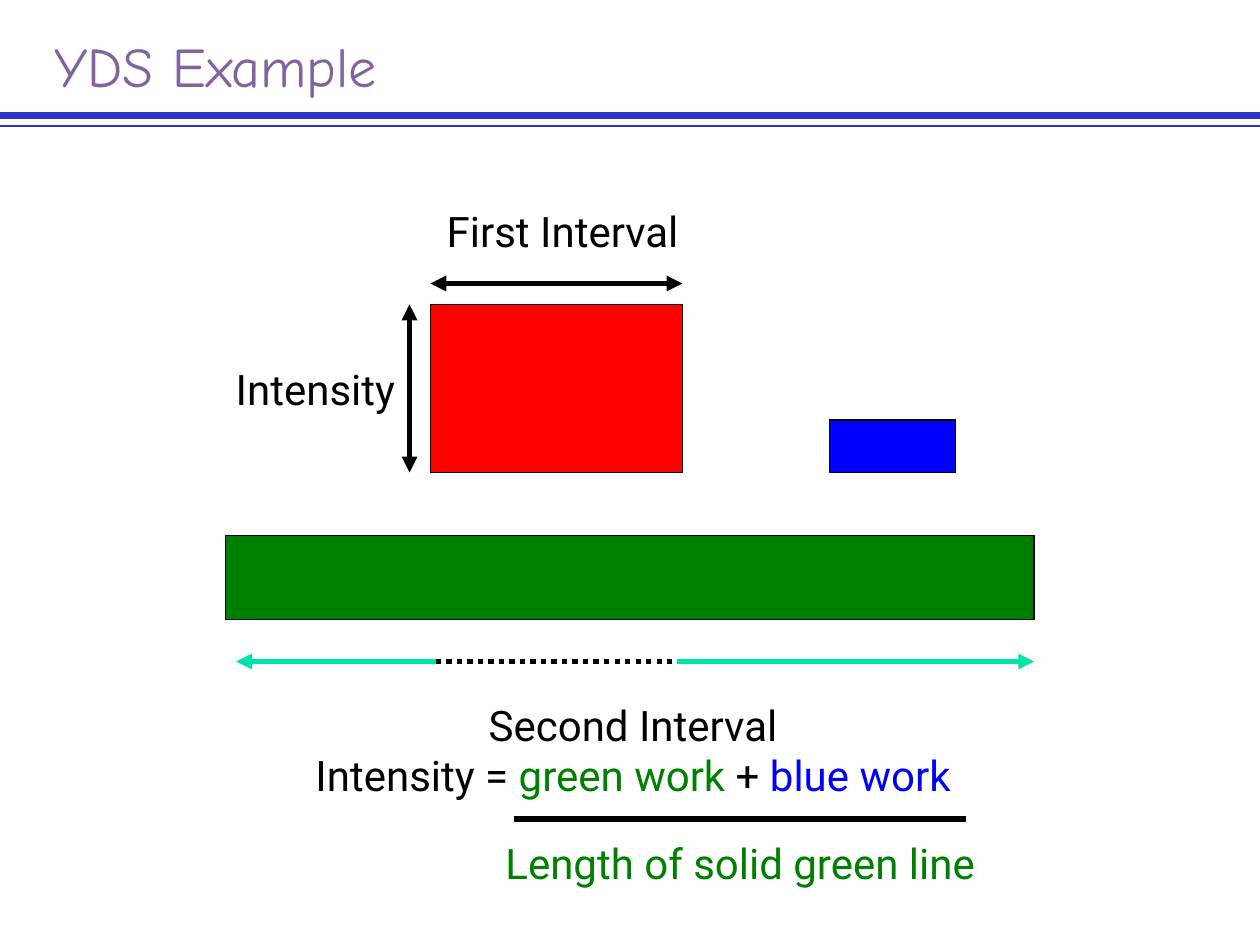
from dataclasses import dataclass

from lxml.etree import SubElement
from pptx import Presentation
from pptx.dml.color import RGBColor
from pptx.enum.dml import MSO_LINE_DASH_STYLE as Dash
from pptx.enum.shapes import MSO_CONNECTOR as Connector, MSO_SHAPE as Preset
from pptx.enum.text import MSO_ANCHOR as Anchor, MSO_AUTO_SIZE as AutoSize, PP_ALIGN as Align
from pptx.oxml.ns import qn
from pptx.util import Pt

BLACK, RED, GREEN, BLUE = "000000", "FF0000", "008000", "0000FF"
TEAL, RULE_BLUE, PURPLE = "00E4A8", "3333CC", "8064A2"


@dataclass
class Block:
    left: float
    top: float
    width: float
    height: float
    color: str

    @property
    def right(self) -> float:
        return self.left + self.width

    @property
    def bottom(self) -> float:
        return self.top + self.height


@dataclass
class Line:
    x1: float
    y1: float
    x2: float
    y2: float
    color: str = BLACK
    width: float = 3
    head: bool = False
    tail: bool = False
    dotted: bool = False


def rgb(color: str) -> RGBColor:
    return RGBColor.from_string(color)


def draw_block(slide, block: Block) -> None:
    shape = slide.shapes.add_shape(Preset.RECTANGLE, Pt(block.left), Pt(block.top),
                                   Pt(block.width), Pt(block.height))
    shape.shadow.inherit = False
    shape.fill.solid()
    shape.fill.fore_color.rgb = rgb(block.color)
    shape.line.color.rgb = rgb(BLACK)
    shape.line.width = Pt(0.75)


def draw_line(slide, line: Line) -> None:
    connector = slide.shapes.add_connector(Connector.STRAIGHT, Pt(line.x1), Pt(line.y1),
                                           Pt(line.x2), Pt(line.y2))
    connector.line.color.rgb = rgb(line.color)
    connector.line.width = Pt(line.width)
    if line.dotted:
        connector.line.dash_style = Dash.ROUND_DOT
    outline = connector.line._get_or_add_ln()
    for tag, wanted in (("a:headEnd", line.head), ("a:tailEnd", line.tail)):
        if wanted:
            SubElement(outline, qn(tag), type="triangle")
    SubElement(connector._element.spPr, qn("a:effectLst"))


def add_text(slide, paragraphs, left: float, top: float, width: float, height: float, *,
             size=24, font="Roboto", align=Align.CENTER, anchor=Anchor.TOP, wrap=False,
             auto_size=AutoSize.SHAPE_TO_FIT_TEXT) -> None:
    """Each paragraph is a list of (text, color) runs."""
    box = slide.shapes.add_textbox(Pt(left), Pt(top), Pt(width), Pt(height))
    frame = box.text_frame
    frame.word_wrap = wrap
    frame.auto_size = auto_size
    frame.vertical_anchor = anchor
    for index, runs in enumerate(paragraphs):
        paragraph = frame.add_paragraph() if index else frame.paragraphs[0]
        paragraph.alignment = align
        for text, color in runs:
            run = paragraph.add_run()
            run.text = text
            run.font.size = Pt(size)
            run.font.name = font
            run.font.color.rgb = rgb(color)


def main() -> None:
    presentation = Presentation()
    presentation.slide_width, presentation.slide_height = Pt(720), Pt(540)
    slide = presentation.slides.add_slide(presentation.slide_layouts[6])

    # Title and its double rule
    draw_line(slide, Line(0, 66, 720, 66, RULE_BLUE, 4.5))
    draw_line(slide, Line(0, 72, 720, 72, RULE_BLUE, 0.75))
    add_text(slide, [[("YDS Example", PURPLE)]], 24, 17.5, 660, 42.5, size=32,
             font="Comic Neue", align=Align.LEFT, anchor=Anchor.BOTTOM, wrap=True,
             auto_size=AutoSize.NONE)

    # Jobs
    red = Block(246, 174, 144, 96, RED)
    green = Block(129, 306, 462, 48, GREEN)
    blue = Block(474, 240, 72, 30, BLUE)
    for block in (red, green, blue):
        draw_block(slide, block)

    # First interval: dimension arrows beside the red job
    gap = 12
    draw_line(slide, Line(red.left - gap, red.top, red.left - gap, red.bottom,
                          head=True, tail=True))
    draw_line(slide, Line(red.left, red.top - gap, red.right, red.top - gap,
                          head=True, tail=True))
    add_text(slide, [[("First Interval", BLACK)]], 247, 114, 149, 36)
    add_text(slide, [[("Intensity", BLACK)]], 126.5, 204, 107.5, 36)

    # Second interval: solid parts on both sides of the dotted first interval
    level = green.bottom + 24
    dots_start, dots_end = 249, 387
    draw_line(slide, Line(135, level, dots_start, level, TEAL, head=True))
    draw_line(slide, Line(dots_start, level, dots_end, level, dotted=True))
    draw_line(slide, Line(dots_end, level, green.right, level, TEAL, tail=True))

    # Intensity formula
    add_text(slide, [[("Second Interval", BLACK)],
                     [("Intensity = ", BLACK), ("green work ", GREEN),
                      ("+ ", BLACK), ("blue work", BLUE)]], 162, 396, 399.5, 65.5)
    draw_line(slide, Line(294, 468, 552, 468))
    add_text(slide, [[("Length of solid green line", GREEN)]], 276, 475, 294, 36.5, wrap=True)

    presentation.save("out.pptx")


if __name__ == "__main__":
    main()
